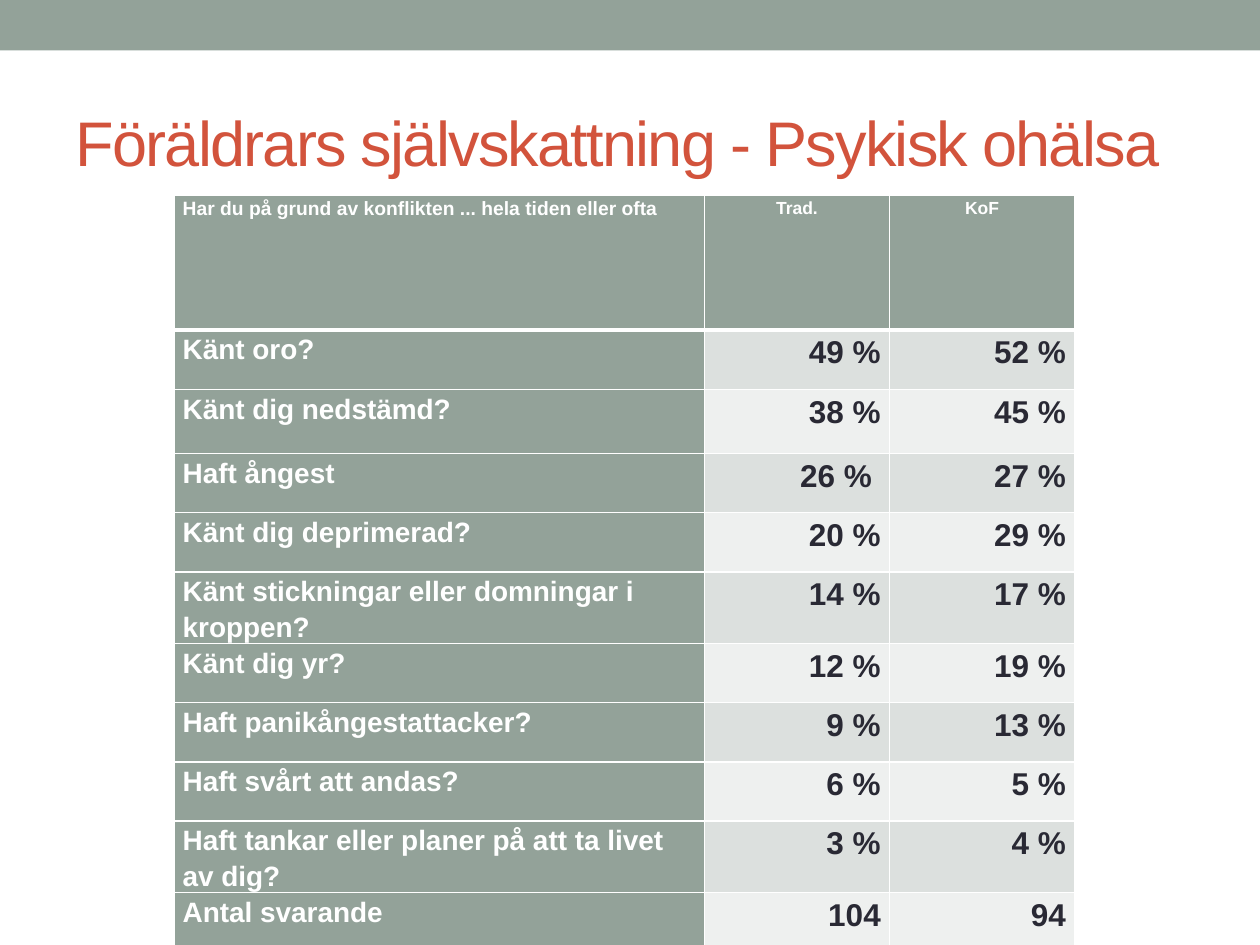
import pptx
import pptx.dml.color
import pptx.enum.shapes
import pptx.enum.text
import pptx.oxml.ns
import pptx.util
from lxml import etree
from pptx.util import Inches

RGBColor = pptx.dml.color.RGBColor
PP_ALIGN = pptx.enum.text.PP_ALIGN

SAGE = RGBColor(0x93, 0xA2, 0x99)
BAND_DARK = RGBColor(0xDC, 0xE0, 0xDE)
BAND_LIGHT = RGBColor(0xEE, 0xF0, 0xEF)
RUST = RGBColor(0xD2, 0x53, 0x3C)
INK = RGBColor(0x29, 0x29, 0x34)
WHITE = RGBColor(0xFF, 0xFF, 0xFF)


def write_text(frame, text, size, color, bold=False, align=PP_ALIGN.LEFT,
               line_spacing=1.0, tracking=None):
    paragraph = frame.paragraphs[0]
    paragraph.alignment = align
    paragraph.line_spacing = line_spacing
    run = paragraph.add_run()
    run.text = text
    run.font.name = "Arial"
    run.font.size = pptx.util.Pt(size)
    run.font.bold = bold
    run.font.color.rgb = color
    if tracking is not None:
        run.font._element.set("spc", str(tracking * 100))


def draw_borders(cell, **widths):
    properties = cell._tc.get_or_add_tcPr()
    for side in "LRTB":
        width = pptx.util.Pt(widths.get(side, 1))
        line = etree.SubElement(properties, pptx.oxml.ns.qn(f"a:ln{side}"), w=str(width))
        fill = etree.SubElement(line, pptx.oxml.ns.qn("a:solidFill"))
        etree.SubElement(fill, pptx.oxml.ns.qn("a:srgbClr"), val=str(WHITE))


presentation = pptx.Presentation()
presentation.slide_width = Inches(10)
presentation.slide_height = Inches(7.5)
slide = presentation.slides.add_slide(presentation.slide_layouts[5])

# Top band
top_band = slide.shapes.add_shape(
    pptx.enum.shapes.MSO_SHAPE.RECTANGLE, 0, 0, Inches(10), Inches(0.4))
top_band.shadow.inherit = False
top_band.fill.solid()
top_band.fill.fore_color.rgb = SAGE
top_band.line.fill.background()

# Title
title = slide.shapes.title
title.left, title.top = Inches(0.5), Inches(0.58)
title.width, title.height = Inches(9), Inches(1.08)
title.text_frame.vertical_anchor = pptx.enum.text.MSO_ANCHOR.MIDDLE
title.text_frame.auto_size = pptx.enum.text.MSO_AUTO_SIZE.NONE
write_text(title.text_frame, "Föräldrars självskattning - Psykisk ohälsa",
           size=36, color=RUST, tracking=-1)

# Survey answers: question, traditional group, KoF group
answers = [
    ("Har du på grund av konflikten ... hela tiden eller ofta", "Trad.", "KoF"),
    ("Känt oro?", "49 %", "52 %"),
    ("Känt dig nedstämd?", "38 %", "45 %"),
    ("Haft ångest", "26 % ", "27 %"),
    ("Känt dig deprimerad?", "20 %", "29 %"),
    ("Känt stickningar eller domningar i kroppen?", "14 %", "17 %"),
    ("Känt dig yr?", "12 %", "19 %"),
    ("Haft panikångestattacker?", "9 %", "13 %"),
    ("Haft svårt att andas?", "6 %", "5 %"),
    ("Haft tankar eller planer på att ta livet av dig?", "3 %", "4 %"),
    ("Antal svarande", "104", "94"),
]
column_widths = [4.21, 1.47, 1.47]
row_heights = [1.07, 0.47, 0.51] + [0.47] * 6 + [0.34, 0.47]

survey = slide.shapes.add_table(
    len(answers), len(column_widths), Inches(1.38), Inches(1.55),
    Inches(sum(column_widths)), Inches(sum(row_heights))).table
for column, width in zip(survey.columns, column_widths):
    column.width = Inches(width)
for row, height in zip(survey.rows, row_heights):
    row.height = Inches(height)

for r, answer in enumerate(answers):
    for c, text in enumerate(answer):
        cell = survey.cell(r, c)
        cell.margin_left = cell.margin_right = Inches(0.07)
        cell.margin_top = cell.margin_bottom = 0

        # A thick rule separates the header from the answers
        draw_borders(cell, T=3 if r == 1 else 1, B=3 if r == 0 else 1)

        # Header row and question column are sage, values are banded
        if r == 0:
            fill, color = SAGE, WHITE
            size = 11 if c == 0 else 10
            align = PP_ALIGN.LEFT if c == 0 else PP_ALIGN.CENTER
        elif c == 0:
            fill, color, size, align = SAGE, WHITE, 16, PP_ALIGN.LEFT
        else:
            fill = BAND_DARK if r % 2 else BAND_LIGHT
            color, size, align = INK, 18, PP_ALIGN.RIGHT
        cell.fill.solid()
        cell.fill.fore_color.rgb = fill
        write_text(cell.text_frame, text, size=size, color=color, bold=True,
                   align=align, line_spacing=1.15)

presentation.save("out.pptx")
